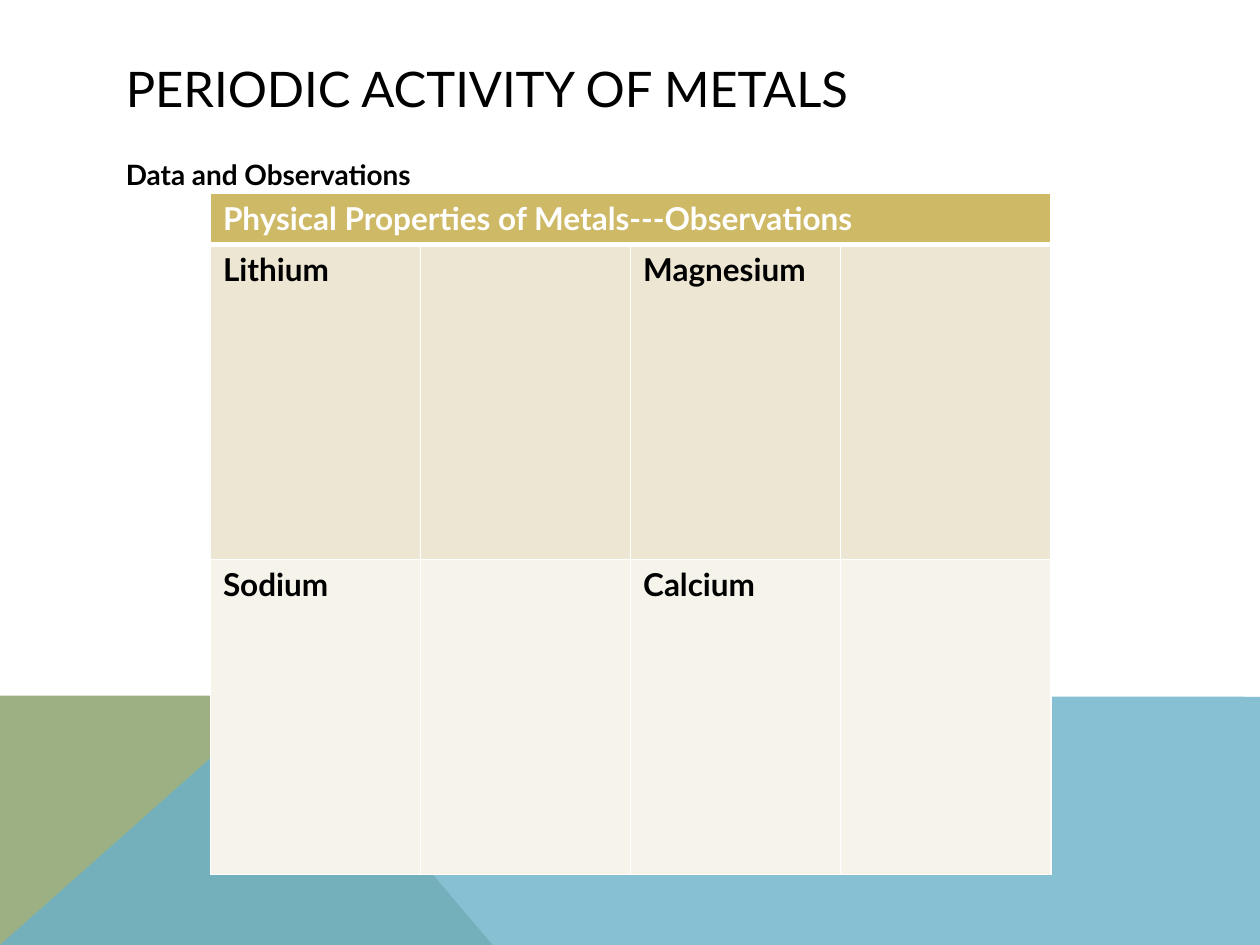
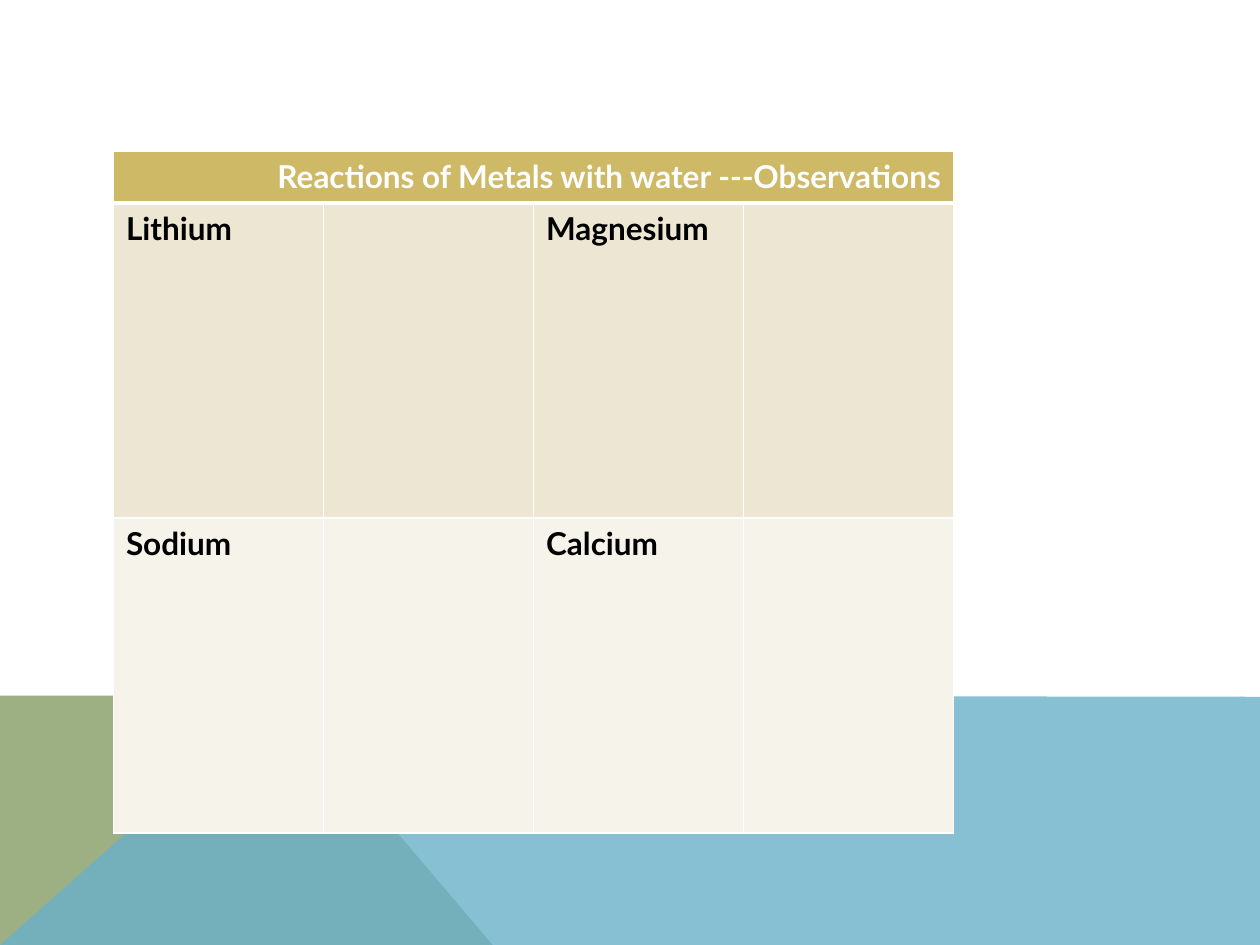
"""Builds two slides of observation tables on the activity of metals."""
from dataclasses import dataclass

from lxml import etree
from pptx import Presentation
from pptx import util as u
from pptx.dml import color
from pptx.enum import text
from pptx.oxml import ns

FONT = "Lato"
BLACK, WHITE = "000000", "FFFFFF"
GOLD, SAND, CREAM = "CEB966", "EDE6D3", "F6F3EA"
GREEN, BLUE = "9CB084", "6BB1C9"
LEFT, TEXT_WIDTH = 0.9, 8.22
COLUMN_WIDTH = 6.67 / 4
HEADER_HEIGHT, METAL_HEIGHT = 0.41, 2.5
METALS = (("Lithium", "Magnesium"), ("Sodium", "Calcium"))


@dataclass(frozen=True)
class Band:
    """A coloured area at the foot of every slide."""
    points: tuple
    fill: str
    opacity: int = 100


@dataclass(frozen=True)
class Caption:
    """A line of text in its own box."""
    words: str
    top: float
    height: float
    size: int
    bold: bool = False
    anchor: text.MSO_ANCHOR = text.MSO_ANCHOR.TOP
    hanging: float = 0
    space_before: int = 0


@dataclass(frozen=True)
class Observations:
    """A table with a heading and room for notes on each metal."""
    heading: str
    left: float
    top: float
    align: text.PP_ALIGN = text.PP_ALIGN.LEFT


BANDS = (
    Band(((0, 7.5), (0, 5.52), (2.23, 5.52), (3.91, 7.5)), GREEN),
    Band(((0, 7.5), (2.23, 5.52), (10, 5.53), (10, 7.5)), BLUE, 80),
)
SLIDES = (
    (
        (
            Caption("PERIODIC ACTIVITY OF METALS", 0.4, 0.6, 28,
                    anchor=text.MSO_ANCHOR.MIDDLE),
            Caption("Data and Observations", 1.2, 3.91, 16, bold=True,
                    hanging=0.38, space_before=8),
        ),
        Observations("Physical Properties of Metals---Observations", 1.67, 1.53),
    ),
    (
        (),
        Observations("Reactions of Metals with water ---Observations", LEFT, 1.2,
                     text.PP_ALIGN.RIGHT),
    ),
)


def rgb(value: str) -> color.RGBColor:
    """Turn a hex string into a colour."""
    return color.RGBColor.from_string(value)


def set_font(paragraph, size: int, hue: str, bold: bool) -> None:
    """Set the font of a whole paragraph."""
    font = paragraph.font
    font.name, font.size, font.bold = FONT, u.Pt(size), bold
    font.color.rgb = rgb(hue)


def draw_band(slide, band: Band) -> None:
    """Draw one area of the background."""
    points = [(u.Inches(x), u.Inches(y)) for x, y in band.points]
    builder = slide.shapes.build_freeform(*points[0])
    builder.add_line_segments(points[1:], close=True)
    area = builder.convert_to_shape()
    area.shadow.inherit = False
    area.line.fill.background()
    area.fill.solid()
    area.fill.fore_color.rgb = rgb(band.fill)
    if band.opacity < 100:
        hue = area.fill._xPr.find(".//" + ns.qn("a:srgbClr"))
        etree.SubElement(hue, ns.qn("a:alpha"), val=str(band.opacity * 1000))


def draw_caption(slide, caption: Caption) -> None:
    """Draw one line of text."""
    box = slide.shapes.add_textbox(u.Inches(LEFT), u.Inches(caption.top),
                                   u.Inches(TEXT_WIDTH), u.Inches(caption.height))
    frame = box.text_frame
    frame.word_wrap = True
    frame.vertical_anchor = caption.anchor
    line = frame.paragraphs[0]
    line.text = caption.words
    line.space_before = u.Pt(caption.space_before)
    set_font(line, caption.size, BLACK, caption.bold)
    if caption.hanging:
        indent = u.Inches(caption.hanging)
        properties = line._p.get_or_add_pPr()
        properties.set("marL", str(indent))
        properties.set("indent", str(-indent))


def style_cell(cell, fill: str, hue: str, top: int = 1, bottom: int = 1) -> None:
    """Give a cell its borders, fill and font."""
    properties = cell._tc.get_or_add_tcPr()
    for side, points in (("L", 1), ("R", 1), ("T", top), ("B", bottom)):
        border = etree.SubElement(properties, ns.qn(f"a:ln{side}"), w=str(u.Pt(points)))
        solid = etree.SubElement(border, ns.qn("a:solidFill"))
        etree.SubElement(solid, ns.qn("a:srgbClr"), val=WHITE)
    cell.fill.solid()
    cell.fill.fore_color.rgb = rgb(fill)
    set_font(cell.text_frame.paragraphs[0], 18, hue, True)


def draw_observations(slide, observations: Observations) -> None:
    """Draw the table of metals."""
    heights = (HEADER_HEIGHT, METAL_HEIGHT, METAL_HEIGHT)
    table = slide.shapes.add_table(
        3, 4, u.Inches(observations.left), u.Inches(observations.top),
        u.Inches(4 * COLUMN_WIDTH), u.Inches(sum(heights))).table
    for column in table.columns:
        column.width = u.Inches(COLUMN_WIDTH)
    for row, height in zip(table.rows, heights):
        row.height = u.Inches(height)
    heading = table.cell(0, 0)
    heading.merge(table.cell(0, 3))
    heading.text = observations.heading
    heading.text_frame.paragraphs[0].alignment = observations.align
    for row, pair in enumerate(METALS, start=1):
        for index, metal in enumerate(pair):
            table.cell(row, 2 * index).text = metal
    row_styles = ((GOLD, WHITE, 1, 3), (SAND, BLACK, 3, 1), (CREAM, BLACK, 1, 1))
    for row, style in zip(table.rows, row_styles):
        for cell in row.cells:
            style_cell(cell, *style)


def main() -> None:
    """Build and save the slides."""
    deck = Presentation()
    deck.slide_width, deck.slide_height = u.Inches(10), u.Inches(7.5)
    for captions, observations in SLIDES:
        slide = deck.slides.add_slide(deck.slide_layouts[6])
        for band in BANDS:
            draw_band(slide, band)
        for caption in captions:
            draw_caption(slide, caption)
        draw_observations(slide, observations)
    deck.save("out.pptx")


if __name__ == "__main__":
    main()
